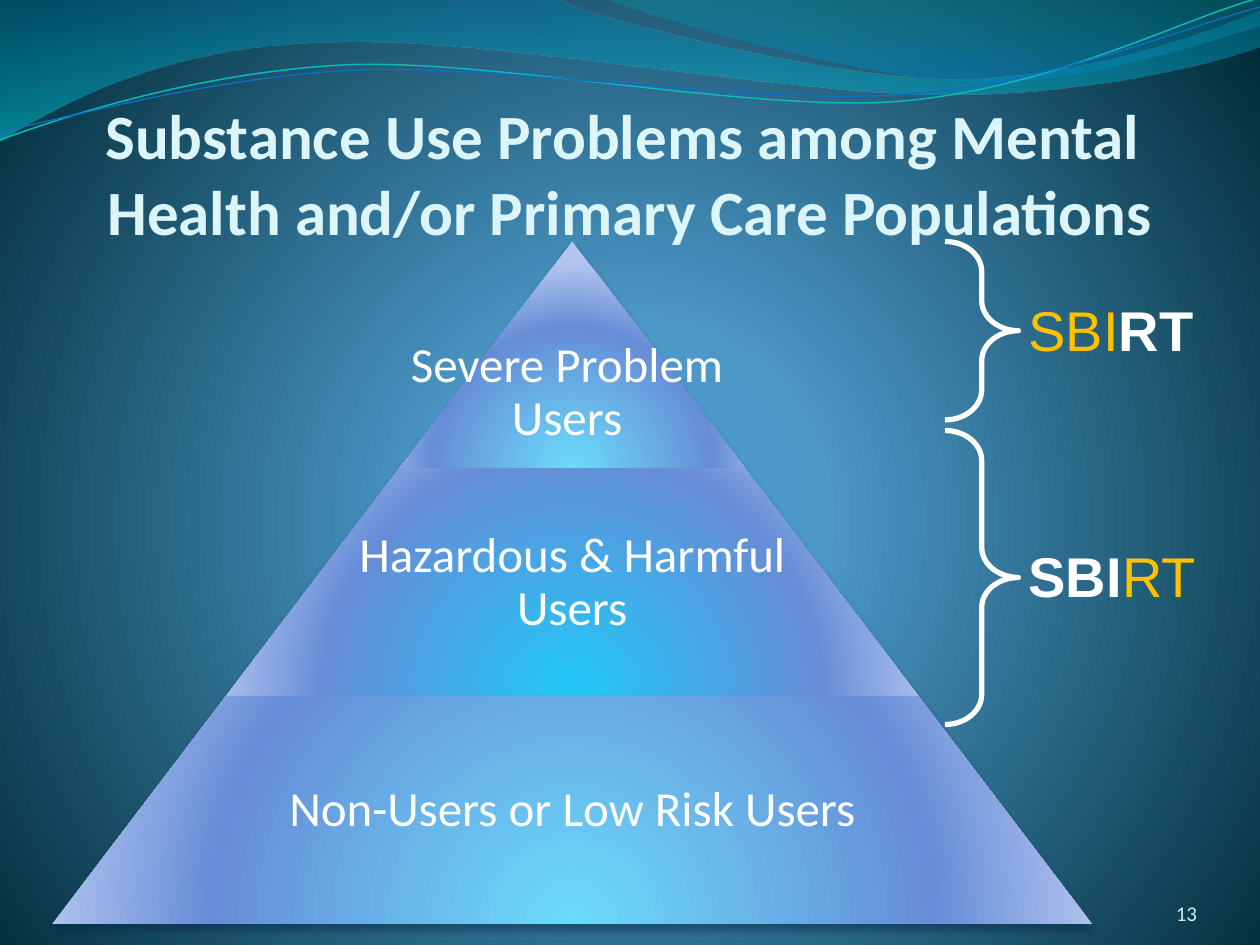
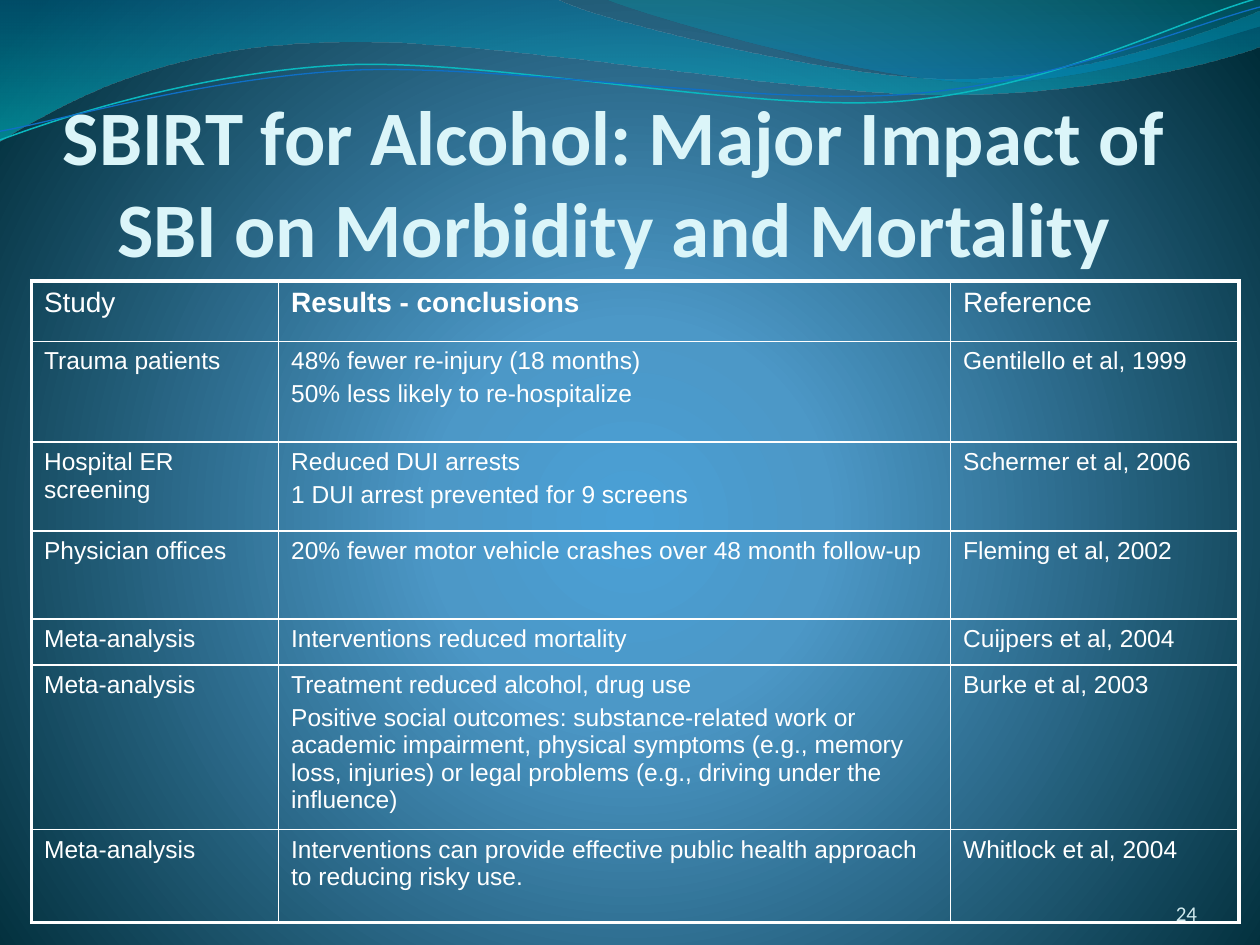
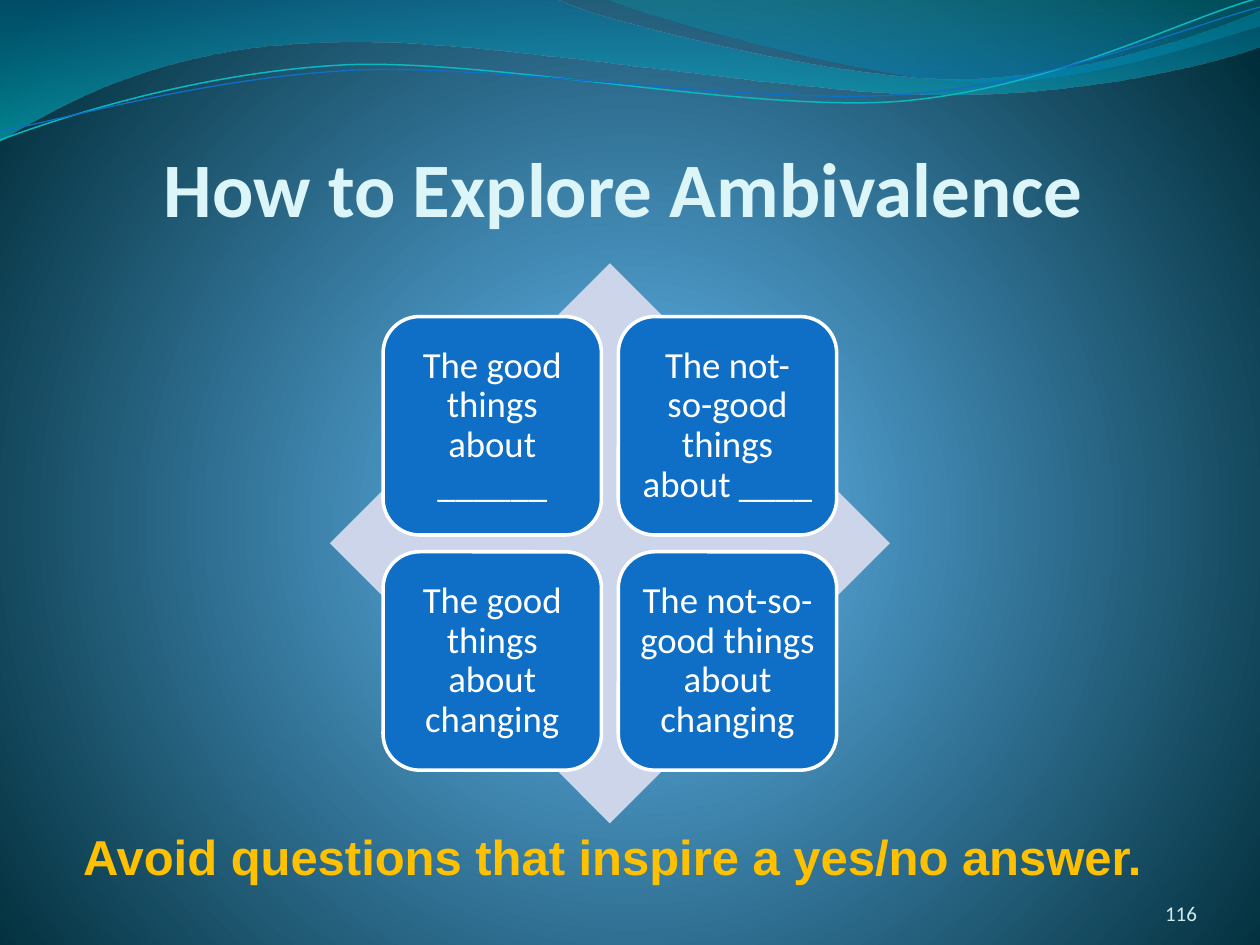
from lxml import etree
from pptx import Presentation
from pptx.dml.color import RGBColor
from pptx.enum.shapes import MSO_SHAPE
from pptx.enum.text import MSO_ANCHOR, PP_ALIGN
from pptx.oxml.ns import qn
from pptx.util import Pt

COLORS = {
    "white": "FFFFFF", "title": "DBF5F9", "number": "D1EAEE", "gold": "FFC000",
    "blue": "0F6FC6", "teal": "0AB8BF", "diamond": "CCD5EA", "shadow": "042747",
    "glow": "4AA0D6", "sky": "4C98C7", "night": "002C38",
    "wave_blue": "0074A1", "wave_aqua": "00C6CF", "crest_green": "00A1A9", "crest_blue": "008BBF",
    "tier_light": "6BDBFA", "tier_bright": "20C9F8", "tier_mid": "668DD7", "tier_edge": "B3C4EF",
}
RGB = {name: RGBColor.from_string(value) for name, value in COLORS.items()}


def set_gradient(fill, element, stops, focus=None):
    """Fill with (position, colour, opacity) stops: downwards, or round a focus (l, t, r, b) in percent."""
    fill.gradient()
    gradient = element.find(".//" + qn("a:gradFill"))
    for child in list(gradient):
        gradient.remove(child)
    stop_list = etree.SubElement(gradient, qn("a:gsLst"))
    for position, color, opacity in stops:
        stop = etree.SubElement(stop_list, qn("a:gs"), pos=str(position * 1000))
        tint = etree.SubElement(stop, qn("a:srgbClr"), val=COLORS[color])
        etree.SubElement(tint, qn("a:alpha"), val=str(opacity * 1000))
    if focus:
        circle = etree.SubElement(gradient, qn("a:path"), path="circle")
        edges = {side: str(percent * 1000) for side, percent in zip("ltrb", focus)}
        etree.SubElement(circle, qn("a:fillToRect"), **edges)
    else:
        etree.SubElement(gradient, qn("a:lin"), ang="5400000", scaled="0")


def add_text(slide, text, box, size, color, font="Calibri", bold=False,
             align=PP_ALIGN.CENTER, anchor=MSO_ANCHOR.MIDDLE, insets=(0, 0), spacing=None):
    frame = slide.shapes.add_textbox(*[Pt(length) for length in box]).text_frame
    frame.word_wrap = True
    frame.vertical_anchor = anchor
    frame.margin_left = frame.margin_right = Pt(insets[0])
    frame.margin_top = frame.margin_bottom = Pt(insets[1])
    frame.text = text
    paragraph = frame.paragraphs[0]
    paragraph.alignment = align
    paragraph.line_spacing = spacing
    for run in paragraph.runs:
        run.font.name, run.font.size, run.font.bold = font, Pt(size), bold
        run.font.color.rgb = RGB[color]
    return paragraph


prs = Presentation()
prs.slide_width, prs.slide_height = Pt(720), Pt(540)
set_gradient(prs.slide_master.background.fill, prs.slide_master.element,
             [(0, "glow", 100), (25, "sky", 100), (100, "night", 100)], (10, 110, 10, 100))

# Each wave: start, segments (one point for a line, three for a curve), gradient stops or line
WAVES = [
    ((0, 0), [[(317, -1)], [(343, 12), (478, 45), (546, 45)], [(615, 45), (690, 19), (720, 6)],
              [(721, 26)], [(708, 32), (626, 55), (537, 54)], [(448, 54), (275, 20), (185, 24)],
              [(93, 26), (33, 60), (-1, 81)]],
     [(0, "wave_blue", 45), (100, "wave_aqua", 55)], None),
    ((345, -1), [[(366, 8), (491, 45), (554, 47)], [(616, 50), (692, 23), (720, 15)], [(720, 0)]],
     [(0, "crest_green", 30), (80, "crest_blue", 45)], None),
    ((0, 80), [[(35, 67), (114, 41), (199, 37)], [(284, 34), (427, 64), (513, 58)],
               [(600, 51), (675, 11), (719, -1)]], None, ("teal", 0.85)),
    ((0, 75), [[(34, 69), (118, 44), (204, 40)], [(290, 37), (430, 60), (516, 54)],
               [(602, 48), (678, 15), (720, 4)]], None, ("blue", 0.75)),
]

TITLES = [
    ("Substance Use Problems among Mental \vHealth and/or Primary Care Populations",
     (0, 65.7, 720, 76), 36, "13"),
    ("SBIRT for Alcohol: Major Impact of SBI on Morbidity and Mortality", (12.2, 73, 678, 83), 44, "24"),
    ("How to Explore Ambivalence", (67, 54, 579, 79), 44, "116"),
]

slides = []
for title, title_box, title_size, number in TITLES:
    slide = prs.slides.add_slide(prs.slide_layouts[6])
    slides.append(slide)
    for start, segments, stops, stroke in WAVES:
        builder = slide.shapes.build_freeform(Pt(start[0]), Pt(start[1]))
        builder.add_line_segments([(Pt(x), Pt(y)) for segment in segments for x, y in segment],
                                  close=stops is not None)
        wave = builder.convert_to_shape()
        vertices = iter(wave.element.findall(".//" + qn("a:lnTo")))
        for segment in segments:
            first, *others = [next(vertices) for _ in segment]
            if others:
                first.tag = qn("a:cubicBezTo")
            for vertex in others:
                first.append(vertex[0])
                vertex.getparent().remove(vertex)
        wave.shadow.inherit = False
        if stops:
            set_gradient(wave.fill, wave.element, stops)
            wave.line.fill.background()
        else:
            wave.fill.background()
            wave.line.color.rgb, wave.line.width = RGB[stroke[0]], Pt(stroke[1])
    add_text(slide, title, title_box, title_size, "title", bold=True, anchor=MSO_ANCHOR.BOTTOM)
    add_text(slide, number, (624, 500, 60, 29), 12, "number", align=PP_ALIGN.RIGHT,
             anchor=MSO_ANCHOR.BOTTOM)

pyramid_slide, studies_slide, ambivalence_slide = slides

# Slide 1: pyramid of users, with braces for the matching part of SBIRT
PYRAMID_CENTER, PYRAMID_TOP, TIER_HEIGHT, TIER_STEP = 327, 138, 130, 198
TIERS = [
    ("Severe Problem Users", "tier_light", 198, (-3, 21.5)),
    ("Hazardous & Harmful Users", "tier_bright", 258, (0, 0)),
    ("Non-Users or Low Risk Users", "tier_light", 386, (0, 0)),
]
for level, (label, core, label_width, (shift_x, shift_y)) in enumerate(TIERS):
    width = TIER_STEP * (level + 1)
    top = PYRAMID_TOP + TIER_HEIGHT * level
    tier = pyramid_slide.shapes.add_shape(MSO_SHAPE.TRAPEZOID, Pt(PYRAMID_CENTER - width / 2), Pt(top),
                                          Pt(width), Pt(TIER_HEIGHT))
    tier.adjustments[0] = TIER_STEP / 2 / TIER_HEIGHT
    set_gradient(tier.fill, tier.element,
                 [(0, core, 100), (68, "tier_mid", 100), (100, "tier_edge", 100)], (50, 130, 50, -30))
    tier.line.fill.background()
    tier.shadow.inherit = False
    effects = tier.element.spPr.find(qn("a:effectLst"))
    shadow = etree.SubElement(effects, qn("a:outerShdw"), blurRad=str(Pt(4.5)), dist=str(Pt(3)),
                              dir="5400000", rotWithShape="0")
    shade = etree.SubElement(shadow, qn("a:srgbClr"), val=COLORS["shadow"])
    etree.SubElement(shade, qn("a:alpha"), val="48000")
    add_text(pyramid_slide, label,
             (PYRAMID_CENTER - label_width / 2 + shift_x, top + shift_y, label_width, TIER_HEIGHT),
             28, "white", insets=(3, 3), spacing=0.9)

# Each brace: top, height, top of its label, and whether the first part (SBI) is the one stressed
for top, height, label_top, screening_stressed in [(138, 102, 165.2, False), (246, 168, 306, True)]:
    brace = pyramid_slide.shapes.add_shape(MSO_SHAPE.RIGHT_BRACE, Pt(540), Pt(top), Pt(42), Pt(height))
    brace.adjustments[0] = 0.41
    brace.shadow.inherit = False
    brace.fill.background()
    brace.line.color.rgb, brace.line.width = RGB["white"], Pt(3)
    label = add_text(pyramid_slide, "SBI", (580.7, label_top, 127, 46), 32, "white", "Arial",
                     align=PP_ALIGN.LEFT, anchor=MSO_ANCHOR.TOP, insets=(7.2, 3.6))
    label.add_run().text = "RT"
    for part, stressed in zip(label.runs, (screening_stressed, not screening_stressed)):
        part.font.name, part.font.size, part.font.bold = "Arial", Pt(32), stressed
        part.font.color.rgb = RGB["white" if stressed else "gold"]

# Slide 2: table of studies
STUDIES = [
    (34.6, "Study", "Results - conclusions", "Reference"),
    (57.5, "Trauma patients", "48% fewer re-injury (18 months)\n50% less likely to re-hospitalize",
     "Gentilello et al, 1999"),
    (50.8, "Hospital ER screening", "Reduced DUI arrests\n1 DUI arrest prevented for 9 screens",
     "Schermer et al, 2006"),
    (50.3, "Physician offices", "20% fewer motor vehicle crashes over 48 month follow-up",
     "Fleming et al, 2002"),
    (26.4, "Meta-analysis", "Interventions reduced mortality", "Cuijpers et al, 2004"),
    (82, "Meta-analysis", "Treatment reduced alcohol, drug use\n"
     "Positive social outcomes: substance-related work or academic impairment, physical symptoms "
     "(e.g., memory loss, injuries) or legal problems (e.g., driving under the influence)",
     "Burke et al, 2003"),
    (53, "Meta-analysis",
     "Interventions can provide effective public health approach to reducing risky use.",
     "Whitlock et al, 2004"),
]
COLUMN_WIDTHS = [141.2, 384, 164.8]
last_row, last_column = len(STUDIES) - 1, len(COLUMN_WIDTHS) - 1
studies = studies_slide.shapes.add_table(
    len(STUDIES), len(COLUMN_WIDTHS), Pt(18), Pt(160.5), Pt(sum(COLUMN_WIDTHS)),
    Pt(sum(study[0] for study in STUDIES))).table
studies.first_row = studies.horz_banding = False
for column, width in zip(studies.columns, COLUMN_WIDTHS):
    column.width = Pt(width)
for r, (height, *entries) in enumerate(STUDIES):
    studies.rows[r].height = Pt(height)
    for c, entry in enumerate(entries):
        cell = studies.cell(r, c)
        cell.fill.background()
        cell.text = entry
        for index, paragraph in enumerate(cell.text_frame.paragraphs):
            if index:
                paragraph.space_before = Pt(2.8)
            font = paragraph.runs[0].font
            font.name, font.size = "Arial", Pt(14 if r else 16)
            font.bold = (r, c) == (0, 1)
            font.color.rgb = RGB["white"]
        outer_edges = {"L": c == 0, "R": c == last_column, "T": r == 0, "B": r == last_row}
        for order, (side, is_outer) in enumerate(outer_edges.items()):
            border = etree.Element(qn("a:ln" + side), w=str(Pt(2.25 if is_outer else 1)))
            solid = etree.SubElement(border, qn("a:solidFill"))
            etree.SubElement(solid, qn("a:srgbClr"), val=COLORS["white"])
            cell._tc.get_or_add_tcPr().insert(order, border)

# Slide 3: four questions on a diamond
diamond = ambivalence_slide.shapes.add_shape(MSO_SHAPE.DIAMOND, Pt(188.5), Pt(150.5), Pt(320), Pt(320))
diamond.shadow.inherit = False
diamond.fill.solid()
diamond.fill.fore_color.rgb = RGB["diamond"]
diamond.line.fill.background()

QUESTIONS = ["The good things about ______", "The not- so-good things about ____",
             "The good things about changing", "The not-so-good things about changing"]
QUESTION_SIZE, QUESTION_PITCH = 124.8, 134.4
for index, question in enumerate(QUESTIONS):
    row, column = divmod(index, 2)
    card = ambivalence_slide.shapes.add_shape(
        MSO_SHAPE.ROUNDED_RECTANGLE, Pt(218.9 + QUESTION_PITCH * column),
        Pt(180.9 + QUESTION_PITCH * row), Pt(QUESTION_SIZE), Pt(QUESTION_SIZE))
    card.shadow.inherit = False
    card.fill.solid()
    card.fill.fore_color.rgb = RGB["blue"]
    card.line.color.rgb, card.line.width = RGB["white"], Pt(2)
    frame = card.text_frame
    frame.word_wrap = True
    frame.vertical_anchor = MSO_ANCHOR.MIDDLE
    frame.margin_left = frame.margin_right = frame.margin_top = frame.margin_bottom = Pt(6.3)
    frame.text = question
    paragraph = frame.paragraphs[0]
    paragraph.alignment, paragraph.line_spacing = PP_ALIGN.CENTER, 0.9
    font = paragraph.runs[0].font
    font.name, font.size = "Calibri", Pt(21)
    font.color.rgb = RGB["white"]

add_text(ambivalence_slide, "Avoid questions that inspire a yes/no answer.", (34.5, 469, 631, 41), 28,
         "gold", "Arial", bold=True, anchor=MSO_ANCHOR.TOP, insets=(7.2, 3.6))

prs.save("out.pptx")
